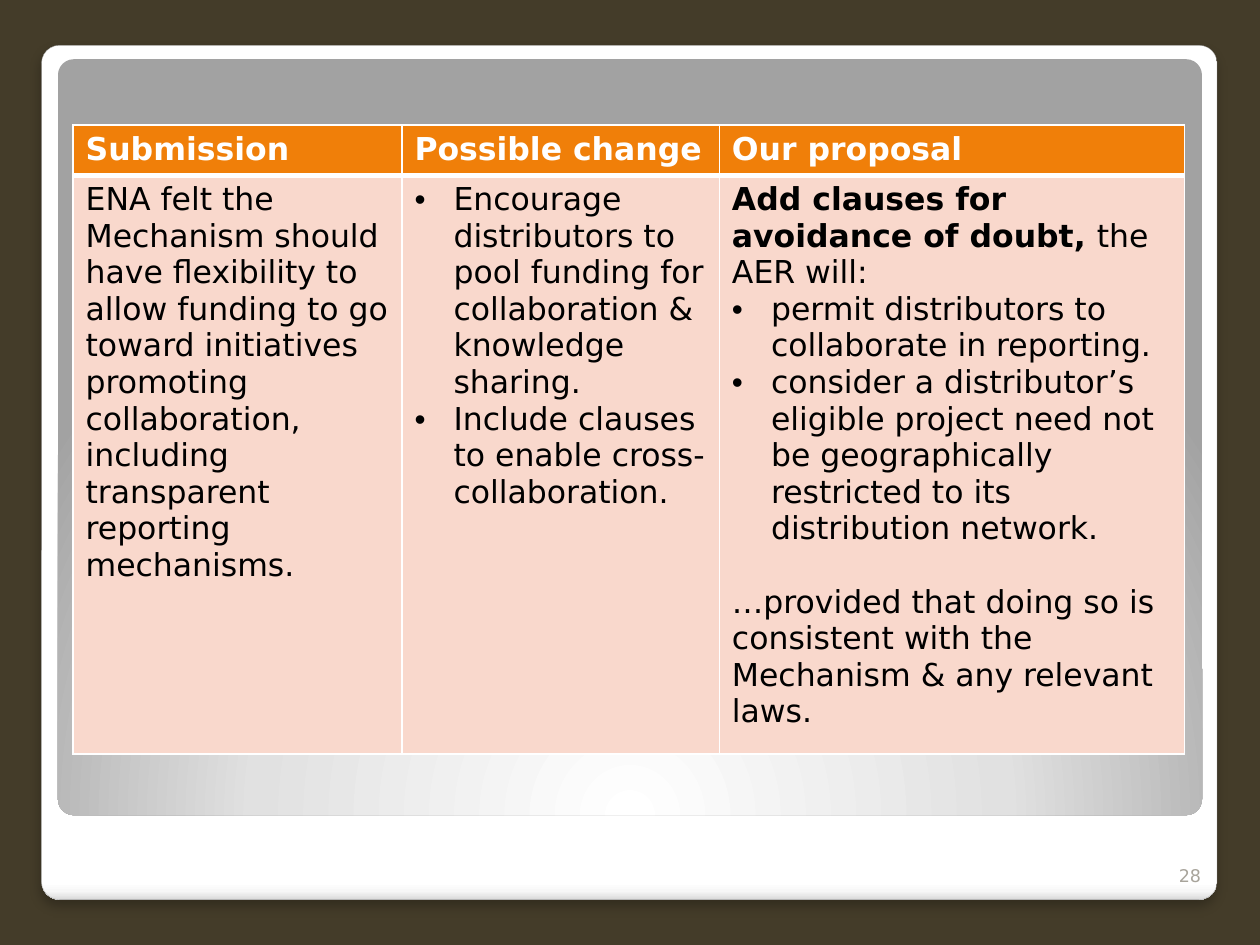
from pptx import Presentation, util as u
from pptx.dml.color import RGBColor
from pptx.enum import shapes, text
from pptx.oxml import parse_xml
from pptx.oxml.ns import nsdecls, qn

HEADERS = ["Submission", "Possible change", "Our proposal"]
BODY = [
    [{"spans": [("ENA felt the Mechanism should have flexibility to allow funding to go "
                 "toward initiatives promoting collaboration, including transparent "
                 "reporting mechanisms.", False)]}],
    [{"bullet": True, "spans": [("Encourage distributors to pool funding for "
                                 "collaboration & knowledge sharing.", False)]},
     {"bullet": True, "spans": [("Include clauses to enable cross-collaboration.", False)]}],
    [{"spans": [("Add clauses for avoidance of doubt, ", True), ("the AER will:", False)]},
     {"bullet": True, "spans": [("permit distributors to collaborate in reporting.", False)]},
     {"bullet": True, "spans": [("consider a distributor’s eligible project need not be "
                                 "geographically restricted to its distribution network.", False)]},
     {"before": 21, "spans": [("…provided that doing so is consistent with the Mechanism "
                               "& any relevant laws.", False)]}],
]


def color(value):
    return RGBColor.from_string(value)


def element(tag, attributes="", content=""):
    return parse_xml(f'<a:{tag} {nsdecls("a")} {attributes}>{content}</a:{tag}>')


class SlideBuilder:
    font = "DejaVu Sans"
    white, black = "FFFFFF", "000000"
    accent, tint = "F07F09", "F9D8CC"

    def __init__(self, page):
        self.page = page

    def background(self, fill):
        self.page.background.fill.solid()
        self.page.background.fill.fore_color.rgb = color(fill)

    def panel(self, left, top, width, height, stops, direction):
        panel = self.page.shapes.add_shape(
            shapes.MSO_SHAPE.ROUNDED_RECTANGLE,
            *map(u.Inches, (left, top, width, height)))
        panel.adjustments[0] = 0.021
        panel.shadow.inherit = False
        panel.fill.gradient()
        properties = panel._element.spPr
        stop_list = "".join(
            f'<a:gs pos="{position * 1000}"><a:srgbClr val="{value}"/></a:gs>'
            for position, value in stops)
        properties.replace(
            properties.find(qn("a:gradFill")),
            element("gradFill", 'rotWithShape="1"',
                    f"<a:gsLst>{stop_list}</a:gsLst>{direction}"))
        panel.line.fill.background()
        return panel

    def outline(self, panel, value, width):
        panel.line.color.rgb = color(value)
        panel.line.width = u.Pt(width)

    def shadow(self, panel, opacity, blur, distance):
        panel._element.spPr.find(qn("a:effectLst")).append(element(
            "outerShdw",
            f'blurRad="{u.Pt(blur)}" dist="{u.Pt(distance)}" dir="5400000" rotWithShape="0"',
            f'<a:srgbClr val="{self.black}"><a:alpha val="{opacity * 1000}"/></a:srgbClr>'))

    def span(self, para, wording, size, value, bold=False):
        span = para.add_run()
        span.text = wording
        formats = {"name": self.font, "size": u.Pt(size), "bold": bold}
        for name, setting in formats.items():
            setattr(span.font, name, setting)
        span.font.color.rgb = color(value)

    def page_number(self, left, top, width, height, wording):
        box = self.page.shapes.add_textbox(*map(u.Inches, (left, top, width, height)))
        formats = {"word_wrap": True, "vertical_anchor": text.MSO_ANCHOR.BOTTOM}
        for name, setting in formats.items():
            setattr(box.text_frame, name, setting)
        para = box.text_frame.paragraphs[0]
        para.alignment = text.PP_ALIGN.RIGHT
        self.span(para, wording, 10, "A8A49B")

    def cell(self, cell, paragraphs, fill, value, borders):
        properties = cell._tc.get_or_add_tcPr()
        for side, width in borders.items():
            properties.append(element(
                f"ln{side}", f'w="{u.Pt(width)}"',
                f'<a:solidFill><a:srgbClr val="{self.white}"/></a:solidFill>'))
        cell.fill.solid()
        cell.fill.fore_color.rgb = color(fill)
        for index, content in enumerate(paragraphs):
            frame = cell.text_frame
            para = frame.add_paragraph() if index else frame.paragraphs[0]
            if "before" in content:
                para.space_before = u.Pt(content["before"])
            if content.get("bullet"):
                layout = para._p.get_or_add_pPr()
                indent = u.Inches(0.31)
                layout.set("marL", str(indent))
                layout.set("indent", str(-indent))
                layout.append(element("buFont", 'typeface="Arial"'))
                layout.append(element("buChar", 'char="•"'))
            for wording, bold in content["spans"]:
                self.span(para, wording, 18, value, bold)

    def table(self, left, top, widths, heights, headers, body):
        table = self.page.shapes.add_table(
            len(heights), len(widths), *map(u.Inches, (left, top, sum(widths), sum(heights)))).table
        for column, width in zip(table.columns, widths):
            column.width = u.Inches(width)
        for row, height in zip(table.rows, heights):
            row.height = u.Inches(height)
        for index, (header, paragraphs) in enumerate(zip(headers, body)):
            self.cell(table.cell(0, index), [{"spans": [(header, True)]}],
                      self.accent, self.white, {"L": 1, "R": 1, "T": 1, "B": 3})
            self.cell(table.cell(1, index), paragraphs,
                      self.tint, self.black, {"L": 1, "R": 1, "T": 3, "B": 1})


def main():
    deck = Presentation()
    deck.slide_width, deck.slide_height = u.Inches(10), u.Inches(7.5)
    builder = SlideBuilder(deck.slides.add_slide(deck.slide_layouts[6]))
    builder.background("443C29")
    frame = builder.panel(
        0.33, 0.36, 9.33, 6.78,
        [(0, "FFFFFF"), (98, "FFFFFF"), (99, "F7F7F7"), (100, "DADADA")],
        '<a:lin ang="5400000" scaled="0"/>')
    builder.outline(frame, "A4A4A4", 0.16)
    builder.shadow(frame, 25, 6, 4)
    builder.panel(
        0.46, 0.47, 9.08, 6, [(0, "FFFFFF"), (55, "E1E1E1"), (100, "A2A2A2")],
        '<a:path path="circle"><a:fillToRect l="50000" t="175000" r="50000" b="-75000"/></a:path>')
    builder.page_number(9.13, 6.68, 0.5, 0.4, "28")
    builder.table(0.58, 0.99, [2.61, 2.52, 3.69], [0.39, 4.31], HEADERS, BODY)
    deck.save("out.pptx")


if __name__ == "__main__":
    main()
